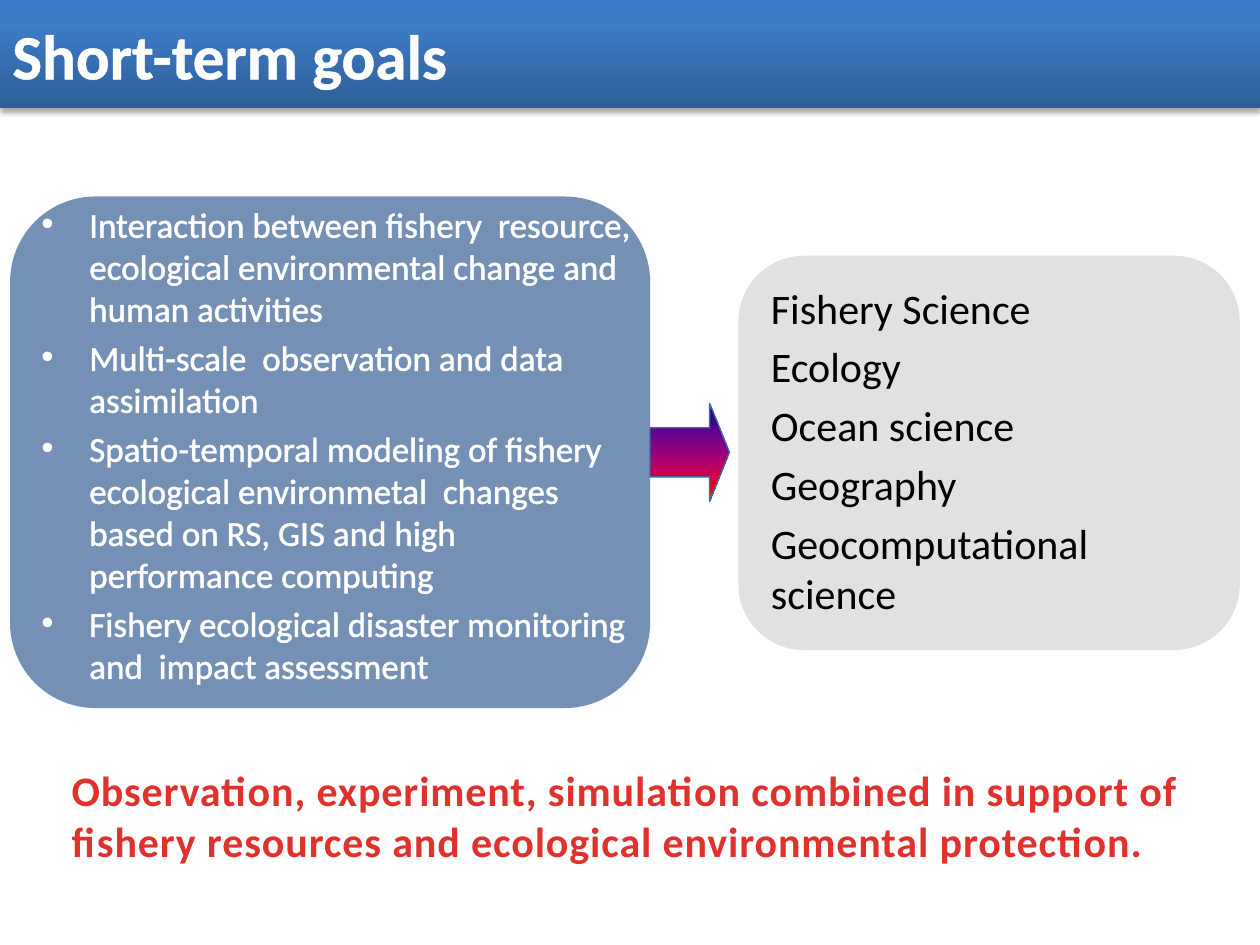
from lxml import etree
from pptx import Presentation
from pptx import util as u
from pptx.dml.color import RGBColor
from pptx.enum import shapes, text
from pptx.oxml import parse_xml
from pptx.oxml.ns import nsdecls, qn

WHITE = RGBColor(0xFF, 0xFF, 0xFF)
BLACK = RGBColor(0x00, 0x00, 0x00)
GRAY = RGBColor(0x80, 0x80, 0x80)
NAVY = RGBColor(0x23, 0x51, 0x8B)
ARROW_EDGE = RGBColor(0x3C, 0x6C, 0xA6)
BAR_STOPS = [
    (0, RGBColor(0x2F, 0x5F, 0x99)),
    (80, RGBColor(0x3D, 0x7C, 0xC7)),
    (100, RGBColor(0x3A, 0x7C, 0xCB)),
]
ARROW_STOPS = [
    (0, RGBColor(0x00, 0x00, 0x82)),
    (30, RGBColor(0x66, 0x00, 0x8F)),
    (65, RGBColor(0xBA, 0x00, 0x66)),
    (90, RGBColor(0xFF, 0x00, 0x00)),
    (100, RGBColor(0xFF, 0x82, 0x00)),
]
SUMMARY_STOPS = [
    (25, RGBColor(0xE0, 0x32, 0x2D)),
    (100, RGBColor(0xA2, 0x20, 0x1C)),
]


def set_gradient(fill, properties, stops, angle):
    fill.gradient()
    gradient = properties.find(qn("a:gradFill"))
    for child in list(gradient):
        gradient.remove(child)
    stop_list = etree.SubElement(gradient, qn("a:gsLst"))
    for position, color in stops:
        stop = etree.SubElement(stop_list, qn("a:gs"), pos=str(position * 1000))
        etree.SubElement(stop, qn("a:srgbClr"), val=str(color))
    etree.SubElement(gradient, qn("a:lin"), ang=str(angle * 60000), scaled="0")


def add_text(place, lines, size, color, bold=False, bullets=False, outline=False):
    box = page.shapes.add_textbox(*[u.Inches(value) for value in place])
    box.text_frame.word_wrap = True
    for index, line in enumerate(lines):
        para = box.text_frame.paragraphs[0]
        if index:
            para = box.text_frame.add_paragraph()
            para.space_before = u.Pt(size * 0.2)
        if bullets:
            properties = para._p.get_or_add_pPr()
            properties.set("marL", str(u.Inches(0.38)))
            properties.set("indent", str(u.Inches(-0.38)))
            etree.SubElement(properties, qn("a:buFont"), typeface="Arial")
            etree.SubElement(properties, qn("a:buChar"), char="•")
        span = para.add_run()
        span.text = line
        span.font.name = "Calibri"
        span.font.size = u.Pt(size)
        span.font.bold = bold
        span.font.color.rgb = color
        if outline:
            span._r.get_or_add_rPr().insert(0, parse_xml(
                f'<a:ln {nsdecls("a")} w="{u.Pt(1.45)}"><a:solidFill>'
                f'<a:srgbClr val="{color}"/></a:solidFill></a:ln>'
            ))
    return box


deck = Presentation()
deck.slide_width = u.Inches(10)
deck.slide_height = u.Inches(7.5)
page = deck.slides.add_slide(deck.slide_layouts[6])

bar = page.shapes.add_shape(
    shapes.MSO_SHAPE.RECTANGLE, u.Inches(0), u.Inches(0), u.Inches(10), u.Inches(0.86)
)
set_gradient(bar.fill, bar._element.spPr, BAR_STOPS, 270)
bar.line.fill.background()
bar._element.spPr.append(parse_xml(
    f'<a:effectLst {nsdecls("a")}>'
    f'<a:outerShdw blurRad="{u.Pt(3.1)}" dist="{u.Pt(1.8)}" dir="5400000" rotWithShape="0">'
    f'<a:srgbClr val="{BLACK}"><a:alpha val="35000"/></a:srgbClr>'
    '</a:outerShdw></a:effectLst>'
))

for place, color, opacity in [
    ((5.86, 2.03, 3.98, 3.13), GRAY, 23),
    ((0.08, 1.56, 5.08, 4.06), NAVY, 63),
]:
    panel = page.shapes.add_shape(
        shapes.MSO_SHAPE.ROUNDED_RECTANGLE, *[u.Inches(value) for value in place]
    )
    panel.shadow.inherit = False
    panel.fill.solid()
    panel.fill.fore_color.rgb = color
    panel.line.fill.background()
    fill_color = panel._element.spPr.find(qn("a:solidFill")).find(qn("a:srgbClr"))
    etree.SubElement(fill_color, qn("a:alpha"), val=str(opacity * 1000))

title = add_text((0, 0, 6.53, 0.86), ["Short-term goals"], 36, WHITE, bold=True, outline=True)
title.text_frame.vertical_anchor = text.MSO_ANCHOR.MIDDLE

goals = [
    "Interaction between fishery  resource, ecological environmental change and human activities",
    "Multi-scale  observation and data assimilation",
    "Spatio-temporal modeling of fishery ecological environmetal  changes "
    "based on RS, GIS and high performance computing",
    "Fishery ecological disaster monitoring and  impact assessment",
]
add_text((0.23, 1.56, 4.92, 3.91), goals, 20, WHITE, bullets=True, outline=True)

arrow = page.shapes.add_shape(
    shapes.MSO_SHAPE.RIGHT_ARROW, u.Inches(5.16), u.Inches(3.2), u.Inches(0.63), u.Inches(0.78)
)
arrow.shadow.inherit = False
arrow.adjustments[0] = 0.5
arrow.adjustments[1] = 0.25
set_gradient(arrow.fill, arrow._element.spPr, ARROW_STOPS, 90)
arrow.line.color.rgb = ARROW_EDGE
arrow.line.width = u.Pt(0.75)

fields = ["Fishery Science", "Ecology", "Ocean science", "Geography", "Geocomputational science"]
add_text((6.02, 2.19, 3.66, 2.81), fields, 24, BLACK)

summary = add_text(
    (0.47, 6.02, 9.14, 1.17),
    ["Observation, experiment, simulation combined in support of "
     "fishery resources and ecological environmental protection."],
    24, SUMMARY_STOPS[0][1], bold=True,
)
span = summary.text_frame.paragraphs[0].runs[0]
span_properties = span._r.get_or_add_rPr()
span_properties.set("spc", "50")
set_gradient(span.font.fill, span_properties, SUMMARY_STOPS, 90)

deck.save("out.pptx")
